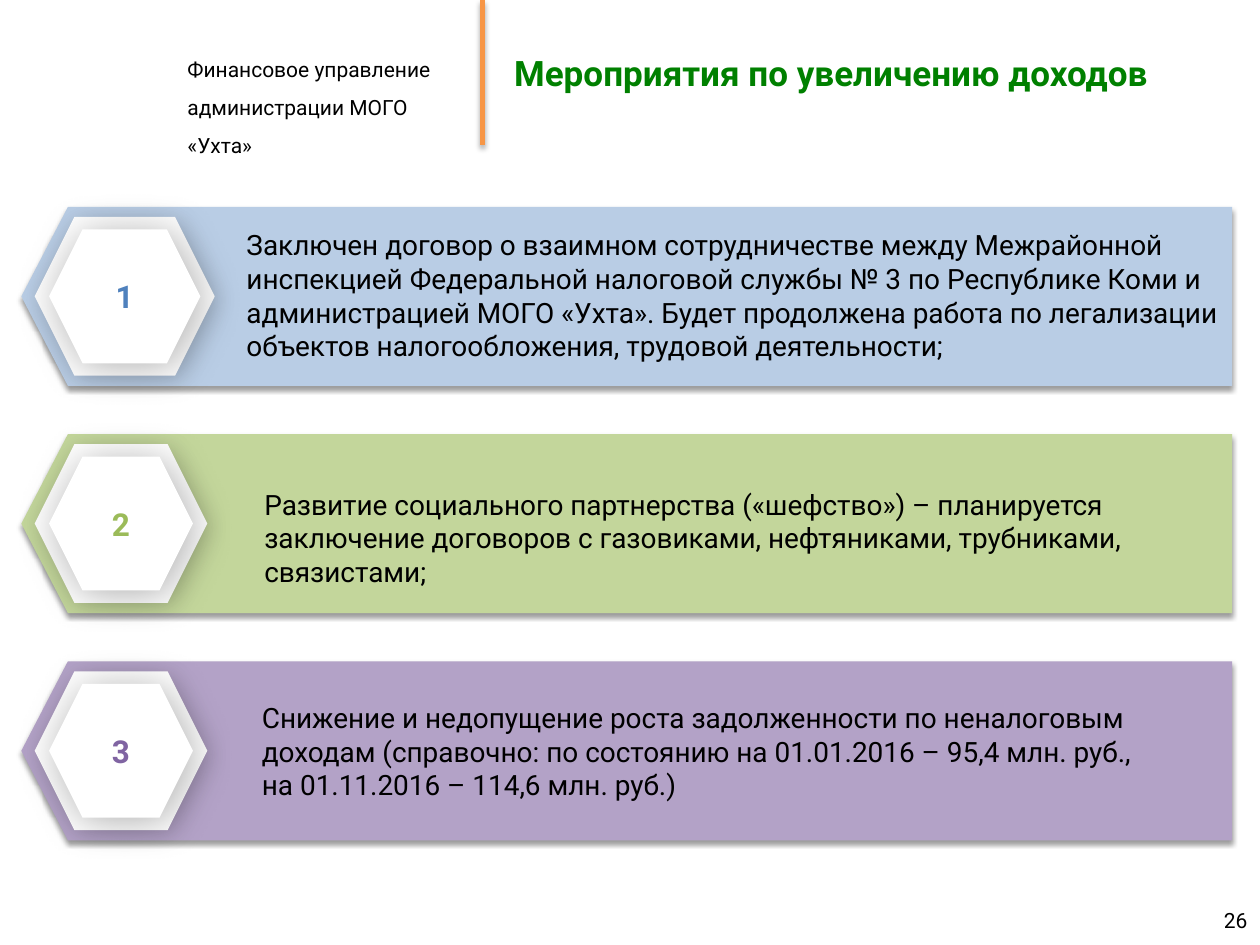
from lxml.etree import SubElement
from pptx import Presentation
from pptx.dml.color import RGBColor
from pptx.enum.shapes import MSO_CONNECTOR, MSO_SHAPE
from pptx.enum.text import MSO_ANCHOR, MSO_AUTO_SIZE, PP_ALIGN
from pptx.oxml.ns import qn
from pptx.util import Cm, Pt

BAR_LEFT, BAR_TOP, BAR_PITCH = 0.43, 4.17, 4.58
BAR_WIDTH, BAR_HEIGHT = 24.41, 3.61
FRAME_LEFT, FRAME_HEIGHT = 0.7, 3.2
RING_X, RING_Y = 0.29, 0.25

MEASURES = [
    dict(bar="B9CDE5", accent="4F81BD", frame_width=3.63, box=(4.72, 4.47, 20.29, 3.0),
         text="Заключен договор о взаимном сотрудничестве между Межрайонной\n"
              "инспекцией Федеральной налоговой службы № 3 по Республике Коми и\n"
              "администрацией МОГО «Ухта». Будет продолжена работа по легализации\n"
              "объектов налогообложения, трудовой деятельности;"),
    dict(bar="C3D69B", accent="9BBB59", frame_width=3.48, box=(5.08, 9.7, 19.2, 2.31),
         text="Развитие социального партнерства («шефство») – планируется\n"
              "заключение договоров с газовиками, нефтяниками, трубниками, связистами;"),
    dict(bar="B3A2C7", accent="8064A2", frame_width=3.48, box=(5.03, 14.0, 18.36, 2.31),
         text="Снижение и недопущение роста задолженности по неналоговым\n"
              "доходам (справочно: по состоянию на 01.01.2016 – 95,4 млн. руб.,\n"
              "на 01.11.2016 – 114,6 млн. руб.)"),
]


def color(value):
    """Turn a hex string into a colour."""
    return RGBColor.from_string(value)


def write(shape, text, size=16, fill="000000", bold=False, align=PP_ALIGN.LEFT,
          anchor=MSO_ANCHOR.TOP, spacing=1.0):
    """Write text into a shape, one paragraph for each line."""
    frame = shape.text_frame
    frame.text = text
    frame.word_wrap = True
    frame.auto_size = MSO_AUTO_SIZE.NONE
    frame.vertical_anchor = anchor
    for paragraph in frame.paragraphs:
        paragraph.alignment = align
        paragraph.line_spacing = spacing
        font = paragraph.font
        font.name, font.size, font.bold = "Roboto", Pt(size), bold
        font.color.rgb = color(fill)


def add_text(slide, box, text, **style):
    """Add a text box at a place given in centimetres."""
    shape = slide.shapes.add_textbox(*map(Cm, box))
    write(shape, text, **style)


def add_shadow(shape, alpha, blur, distance, angle):
    """Give a shape or connector a soft black shadow."""
    effects = SubElement(shape._element.spPr, qn("a:effectLst"))
    shadow = SubElement(effects, qn("a:outerShdw"), blurRad=str(Pt(blur)),
                        dist=str(Pt(distance)), dir=str(angle * 60000), rotWithShape="0")
    black = SubElement(shadow, qn("a:srgbClr"), val="000000")
    SubElement(black, qn("a:alpha"), val=str(alpha * 1000))


def add_block(slide, kind, box, fill, shadow):
    """Add a filled preset shape without outline."""
    shape = slide.shapes.add_shape(kind, *map(Cm, box))
    shape.fill.solid()
    shape.fill.fore_color.rgb = color(fill)
    shape.line.fill.background()
    add_shadow(shape, *shadow)
    return shape


def add_divider(slide):
    """Add the vertical line beside the title."""
    line = slide.shapes.add_connector(MSO_CONNECTOR.STRAIGHT, Cm(9.73), Cm(0), Cm(9.73), Cm(2.92))
    line.line.color.rgb = color("F79646")
    line.line.width = Pt(3)
    add_shadow(line, 35, 3.1, 1.8, 90)


def add_measure(slide, index, bar, accent, frame_width, box, text):
    """Add one numbered bar with its hexagons and text."""
    top = BAR_TOP + index * BAR_PITCH
    arrow = add_block(slide, MSO_SHAPE.PENTAGON, (BAR_LEFT, top, BAR_WIDTH, BAR_HEIGHT),
                      bar, (38, 3.1, 1.6, 90))
    arrow.rotation = 180
    arrow.adjustments[0] = 0.26
    frame_top = top + (BAR_HEIGHT - FRAME_HEIGHT) / 2
    add_block(slide, MSO_SHAPE.HEXAGON, (FRAME_LEFT, frame_top, frame_width, FRAME_HEIGHT),
              "FFFFFF", (13, 12, 3, 45))
    badge = add_block(slide, MSO_SHAPE.HEXAGON,
                      (FRAME_LEFT + RING_X, frame_top + RING_Y,
                       frame_width - 2 * RING_X, FRAME_HEIGHT - 2 * RING_Y),
                      "FFFFFF", (31, 24, 3, 45))
    write(badge, str(index + 1), size=18, fill=accent, bold=True,
          align=PP_ALIGN.CENTER, anchor=MSO_ANCHOR.MIDDLE)
    add_text(slide, box, text)


def main():
    """Build and save the slide."""
    presentation = Presentation()
    presentation.slide_width, presentation.slide_height = Cm(25.4), Cm(19.05)
    slide = presentation.slides.add_slide(presentation.slide_layouts[5])
    title = slide.shapes.title
    title.left, title.top, title.width, title.height = map(Cm, (10.11, 0, 15.29, 2.92))
    write(title, "Мероприятия по увеличению доходов", size=20, fill="008000", bold=True,
          anchor=MSO_ANCHOR.MIDDLE)
    add_text(slide, (3.53, 0.76, 6.1, 2.5), "Финансовое управление\nадминистрации МОГО «Ухта»",
             size=12, spacing=1.5)
    add_divider(slide)
    for index, measure in enumerate(MEASURES):
        add_measure(slide, index, **measure)
    add_text(slide, (19.48, 18.03, 5.92, 1.02), "26", size=12, align=PP_ALIGN.RIGHT,
             anchor=MSO_ANCHOR.MIDDLE)
    presentation.save("out.pptx")


if __name__ == "__main__":
    main()
